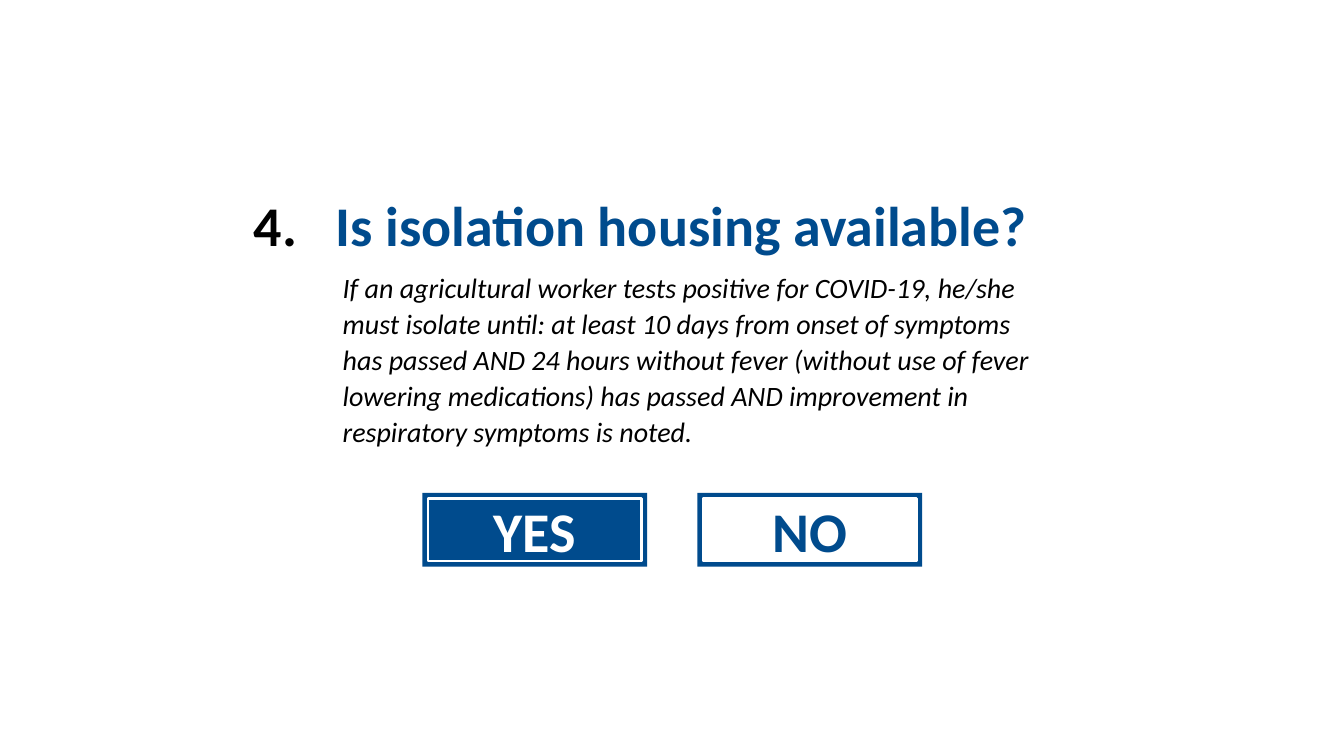
"""Build the isolation housing question slide."""
from pptx import Presentation
from pptx.dml.color import RGBColor
from pptx.enum.shapes import MSO_SHAPE as Shape
from pptx.enum.text import MSO_ANCHOR as Anchor, MSO_AUTO_SIZE as AutoSize, PP_ALIGN as Align
from pptx.oxml.ns import qn
from pptx.util import Pt
from lxml.etree import SubElement

COLORS = {"navy": "004B8D", "white": "FFFFFF", "black": "000000"}
FONT = "Calibri"
QUESTION_NUMBER = 4
QUESTION = "Is isolation housing available?"
EXPLANATION = (
    "If an agricultural worker tests positive for COVID-19, he/she must isolate until: "
    "at least 10 days from onset of symptoms has passed AND 24 hours without fever "
    "(without use of fever lowering medications) has passed AND improvement in "
    "respiratory symptoms is noted."
)
ANSWERS = [("YES", "navy", "white"), ("NO", "white", "navy")]

QUESTION_BOX = (174.2, 133.2, 568, 54.7)
EXPLANATION_BOX = (237.6, 187.9, 519, 136)
NUMBER_INDENT = 58.5
BUTTON_LEFT, BUTTON_TOP, BUTTON_STEP = 301.7, 352.1, 196.4
BUTTON_WIDTH, BUTTON_HEIGHT = 160.6, 52.6
INNER_WIDTH, INNER_HEIGHT = 152.6, 44.6


def color(name):
    return RGBColor.from_string(COLORS[name])


def place(shape, bounds):
    shape.left, shape.top, shape.width, shape.height = map(Pt, bounds)


def write(shape, text, size, color_name, anchor, align, bold=False, italic=False):
    frame = shape.text_frame
    frame.text = text
    frame.word_wrap = True
    frame.auto_size = AutoSize.NONE
    frame.vertical_anchor = anchor
    para = frame.paragraphs[0]
    para.alignment = align
    para.space_before = Pt(0)
    font = para.runs[0].font
    font.name, font.size = FONT, Pt(size)
    font.bold, font.italic = bold, italic
    font.color.rgb = color(color_name)
    return para


def set_indent(para, points):
    properties = para._p.get_or_add_pPr()
    properties.set("marL", str(Pt(points)))
    properties.set("indent", str(-Pt(points)))
    return properties


def add_question(title):
    place(title, QUESTION_BOX)
    para = write(title, QUESTION, 40, "navy", Anchor.TOP, Align.LEFT, bold=True)
    para.line_spacing = Pt(47)
    properties = set_indent(para, NUMBER_INDENT)
    bullet_color = SubElement(properties, qn("a:buClr"))
    SubElement(bullet_color, qn("a:srgbClr"), val=COLORS["black"])
    SubElement(properties, qn("a:buFont"), typeface="+mj-lt")
    SubElement(properties, qn("a:buAutoNum"), type="arabicPeriod", startAt=str(QUESTION_NUMBER))


def add_explanation(body):
    place(body, EXPLANATION_BOX)
    para = write(body, EXPLANATION, 20, "black", Anchor.TOP, Align.LEFT, italic=True)
    para.line_spacing = 1.07
    para.space_after = Pt(8)
    SubElement(set_indent(para, 0), qn("a:buNone"))


def add_rectangle(group, bounds, fill):
    box = group.shapes.add_shape(Shape.RECTANGLE, *map(Pt, bounds))
    box.shadow.inherit = False
    box.fill.solid()
    box.fill.fore_color.rgb = color(fill)
    box.line.fill.background()
    return box


def add_button(slide, index, label, fill, text_color):
    group = slide.shapes.add_group_shape()
    left = BUTTON_LEFT + index * BUTTON_STEP
    add_rectangle(group, (left, BUTTON_TOP, BUTTON_WIDTH, BUTTON_HEIGHT), "navy")
    inner_left = left + (BUTTON_WIDTH - INNER_WIDTH) / 2
    inner_top = BUTTON_TOP + (BUTTON_HEIGHT - INNER_HEIGHT) / 2
    inner = add_rectangle(group, (inner_left, inner_top, INNER_WIDTH, INNER_HEIGHT), fill)
    inner.line.color.rgb = color("white")
    inner.line.width = Pt(1.5)
    inner.text_frame.margin_top = inner.text_frame.margin_bottom = 0
    write(inner, label, 40, text_color, Anchor.MIDDLE, Align.CENTER, bold=True)


def main():
    deck = Presentation()
    deck.slide_width, deck.slide_height = Pt(960), Pt(540)
    slide = deck.slides.add_slide(deck.slide_layouts[1])
    add_question(slide.shapes.title)
    add_explanation(slide.placeholders[1])
    for index, answer in enumerate(ANSWERS):
        add_button(slide, index, *answer)
    deck.save("out.pptx")


if __name__ == "__main__":
    main()
